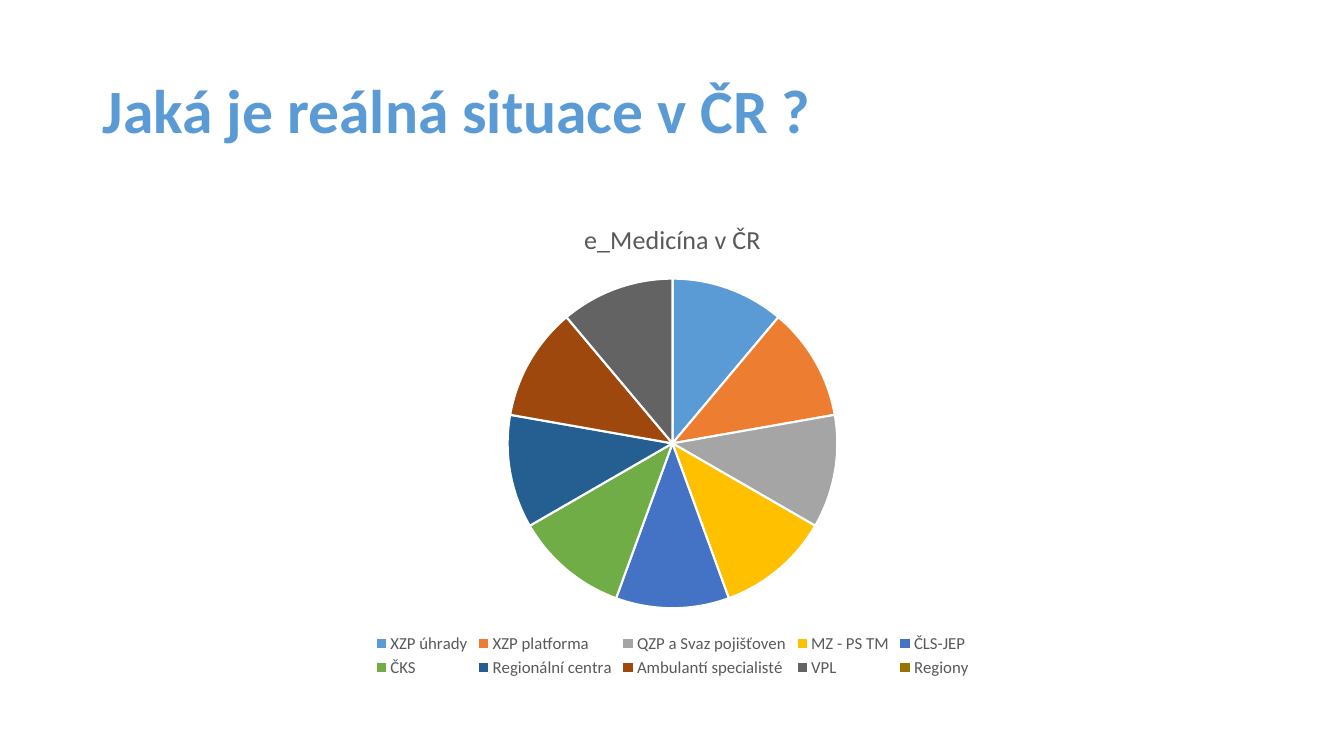
from typing import NamedTuple, Optional

from pptx import Presentation
from pptx import util as u
from pptx.chart.data import CategoryChartData
from pptx.dml.color import RGBColor
from pptx.enum import chart as ch, text

FONT = "Calibri"
COLOURS = {"title": "5B9BD5", "label": "595959", "border": "FFFFFF"}


class Slice(NamedTuple):
    label: str
    value: Optional[int]
    colour: str


SLICES = [
    Slice("XZP úhrady", 11, "5B9BD5"),
    Slice("XZP platforma", 11, "ED7D31"),
    Slice("QZP a Svaz pojišťoven", 11, "A5A5A5"),
    Slice("MZ - PS TM", 11, "FFC000"),
    Slice("ČLS-JEP", 11, "4472C4"),
    Slice("ČKS", 11, "70AD47"),
    Slice("Regionální centra", 11, "255E91"),
    Slice("Ambulantí specialisté", 11, "9E480E"),
    Slice("VPL", 11, "636363"),
    Slice("Regiony", None, "997300"),
]


def style_font(font, size: float, colour: str, bold: bool = False) -> None:
    font.name = FONT
    font.size = u.Pt(size)
    font.bold = bold
    font.color.rgb = RGBColor.from_string(colour)


def add_title(page, wording: str) -> None:
    title = page.shapes.title
    title.left, title.top = u.Inches(0.92), u.Inches(0.4)
    title.width, title.height = u.Inches(11.5), u.Inches(1.45)
    frame = title.text_frame
    frame.text = wording
    frame.word_wrap = True
    frame.vertical_anchor = text.MSO_ANCHOR.MIDDLE
    para = frame.paragraphs[0]
    para.alignment = text.PP_ALIGN.LEFT
    para.line_spacing = 0.9
    style_font(para.runs[0].font, 44, COLOURS["title"], bold=True)


def add_pie(page, name: str, slices: list[Slice]) -> None:
    data = CategoryChartData()
    data.categories = [part.label for part in slices]
    data.add_series(name, [part.value for part in slices])
    pie = page.shapes.add_chart(
        ch.XL_CHART_TYPE.PIE, u.Inches(0.92), u.Inches(2),
        u.Inches(11.5), u.Inches(4.76), data,
    ).chart
    pie.font.name = FONT
    pie.font.size = u.Pt(10)

    # Chart title
    pie.has_title = True
    pie.chart_title.include_in_layout = False
    frame = pie.chart_title.text_frame
    frame.text = name
    style_font(frame.paragraphs[0].runs[0].font, 18.6, COLOURS["label"])

    # Legend
    pie.has_legend = True
    pie.legend.position = ch.XL_LEGEND_POSITION.BOTTOM
    pie.legend.include_in_layout = False
    style_font(pie.legend.font, 12, COLOURS["label"])

    # Slice colours and white borders
    plot = pie.plots[0]
    plot.vary_by_categories = True
    for index, part in enumerate(slices):
        look = plot.series[0].points[index].format
        look.fill.solid()
        look.fill.fore_color.rgb = RGBColor.from_string(part.colour)
        look.line.color.rgb = RGBColor.from_string(COLOURS["border"])
        look.line.width = u.Pt(1.5)


def main() -> None:
    deck = Presentation()
    deck.slide_width, deck.slide_height = u.Inches(13.33), u.Inches(7.5)
    page = deck.slides.add_slide(deck.slide_layouts.get_by_name("Title Only"))
    add_title(page, "Jaká je reálná situace v ČR ?")
    add_pie(page, "e_Medicína v ČR", SLICES)
    deck.save("out.pptx")


if __name__ == "__main__":
    main()
